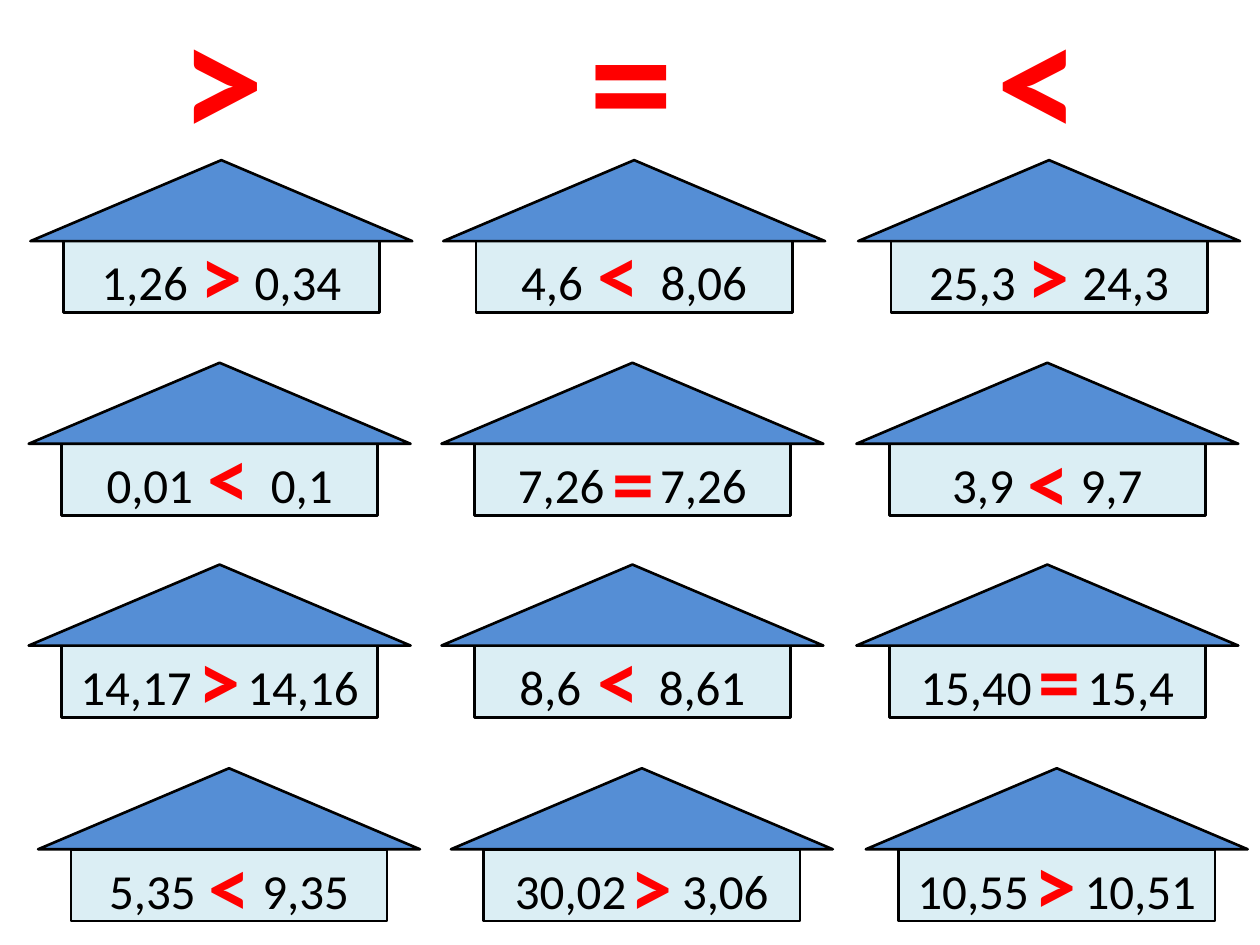
"""Build a slide of twelve houses, each comparing two decimal numbers."""
from dataclasses import dataclass

import pptx
import pptx.dml.color
import pptx.enum.shapes
import pptx.enum.text
import pptx.oxml.ns
import pptx.util
from lxml import etree

Pt = pptx.util.Pt
Shape = pptx.enum.shapes.MSO_SHAPE


@dataclass(frozen=True)
class Theme:
    """Colours, font and type sizes of the slide."""
    font: str = "Calibri"
    roof: str = "558ED5"
    wall: str = "DBEEF4"
    ink: str = "000000"
    sign: str = "FF0000"
    number_size: float = 28
    sign_size: float = 48
    heading_size: float = 96
    outline: float = 1.5


THEME = Theme()
ROOF_WIDTH, ROOF_HEIGHT = 218.2, 46.3
WALL_WIDTH, WALL_HEIGHT = 180.7, 41
COLUMN_LEFTS = (17.4, 253.3, 490.4)
ROWS = ((91.5, 0), (207.3, -1), (322.6, -1), (439, 4.4))
NARROW, NORMAL, WIDE = 31.7, 38, 44.3

HEADINGS = ((">", 95.8, 61.9), ("=", 329.8, 62.6), ("<", 562.3, 74.2))
COMPARISONS = (
    (("1,26", ">", "0,34", NORMAL, 107.3, 123.8),
     ("4,6", "<", "8,06", WIDE, 334.1, 123.1),
     ("25,3", ">", "24,3", NORMAL, 580.3, 123.8)),
    (("0,01", "<", "0,1", WIDE, 111.6, 239),
     ("7,26", "=", "7,26", NARROW, 342.7, 241.9),
     ("3,9", "<", "9,7", NORMAL, 580.3, 241.9)),
    (("14,17", ">", "14,16", NARROW, 106.6, 355),
     ("8,6", "<", "8,61", WIDE, 334.1, 355),
     ("15,40", "=", "15,4", NARROW, 586.1, 355)),
    (("5,35", "<", "9,35", NORMAL, 112.3, 473),
     ("30,02", ">", "3,06", NARROW, 353.5, 473),
     ("10,55", ">", "10,51", NARROW, 583.9, 471.6)),
)


def rgb(value):
    """Turn a hex string into a colour."""
    return pptx.dml.color.RGBColor.from_string(value)


def add_run(paragraph, text, size, color, bold=False):
    """Append one styled run."""
    run = paragraph.add_run()
    run.text = text
    run.font.name = THEME.font
    run.font.size = Pt(size)
    run.font.bold = bold
    run.font.color.rgb = rgb(color)


def number_width(number):
    """Estimate the set width of a decimal number in points."""
    return sum(0.25 if mark == "," else 0.507 for mark in number) * THEME.number_size


def add_part(house, kind, left, top, width, height, color):
    """Add one outlined part of a house."""
    part = house.shapes.add_shape(kind, Pt(left), Pt(top), Pt(width), Pt(height))
    part.shadow.inherit = False
    part.fill.solid()
    part.fill.fore_color.rgb = rgb(color)
    part.line.color.rgb = rgb(THEME.ink)
    part.line.width = Pt(THEME.outline)
    return part


def write_numbers(wall, first, second, gap):
    """Centre two numbers as a pair, with a tab leaving room for the sign."""
    second_start = number_width(first) + gap
    frame = wall.text_frame
    frame.word_wrap = True
    frame.vertical_anchor = pptx.enum.text.MSO_ANCHOR.MIDDLE
    frame.margin_left = Pt((WALL_WIDTH - second_start - number_width(second)) / 2)
    frame.margin_right = 0
    paragraph = frame.paragraphs[0]
    qn = pptx.oxml.ns.qn
    tabs = etree.SubElement(paragraph._p.get_or_add_pPr(), qn("a:tabLst"))
    etree.SubElement(tabs, qn("a:tab"), pos=str(int(Pt(second_start))), algn="l")
    paragraph.alignment = pptx.enum.text.PP_ALIGN.LEFT
    paragraph.line_spacing = 1.15
    paragraph.space_after = Pt(10)
    add_run(paragraph, f"{first}\t{second}", THEME.number_size, THEME.ink)


def add_house(slide, left, top, first, second, gap):
    """Add a grouped wall and roof with its two numbers."""
    house = slide.shapes.add_group_shape()
    wall = add_part(house, Shape.RECTANGLE, left + (ROOF_WIDTH - WALL_WIDTH) / 2,
                    top + ROOF_HEIGHT, WALL_WIDTH, WALL_HEIGHT, THEME.wall)
    write_numbers(wall, first, second, gap)
    add_part(house, Shape.ISOSCELES_TRIANGLE, left, top,
             ROOF_WIDTH, ROOF_HEIGHT, THEME.roof)


def add_sign(slide, sign, left, top, width, height, size):
    """Add a bold comparison sign."""
    box = slide.shapes.add_textbox(Pt(left), Pt(top), Pt(width), Pt(height))
    box.text_frame.word_wrap = True
    add_run(box.text_frame.paragraphs[0], sign, size, THEME.sign, bold=True)


def main():
    """Build and save the slide."""
    deck = pptx.Presentation()
    deck.slide_width, deck.slide_height = Pt(720), Pt(540)
    slide = deck.slides.add_slide(deck.slide_layouts[6])
    for (top, shift), comparisons in zip(ROWS, COMPARISONS):
        for column_left, comparison in zip(COLUMN_LEFTS, comparisons):
            first, sign, second, gap, sign_left, sign_top = comparison
            add_house(slide, column_left + shift, top, first, second, gap)
            sign_width = 49.7 if sign == "<" else 38.9
            add_sign(slide, sign, sign_left, sign_top, sign_width, 65.5,
                     THEME.sign_size)
    for sign, left, width in HEADINGS:
        add_sign(slide, sign, left, -19.4, width, 123.8, THEME.heading_size)
    deck.save("out.pptx")


if __name__ == "__main__":
    main()
